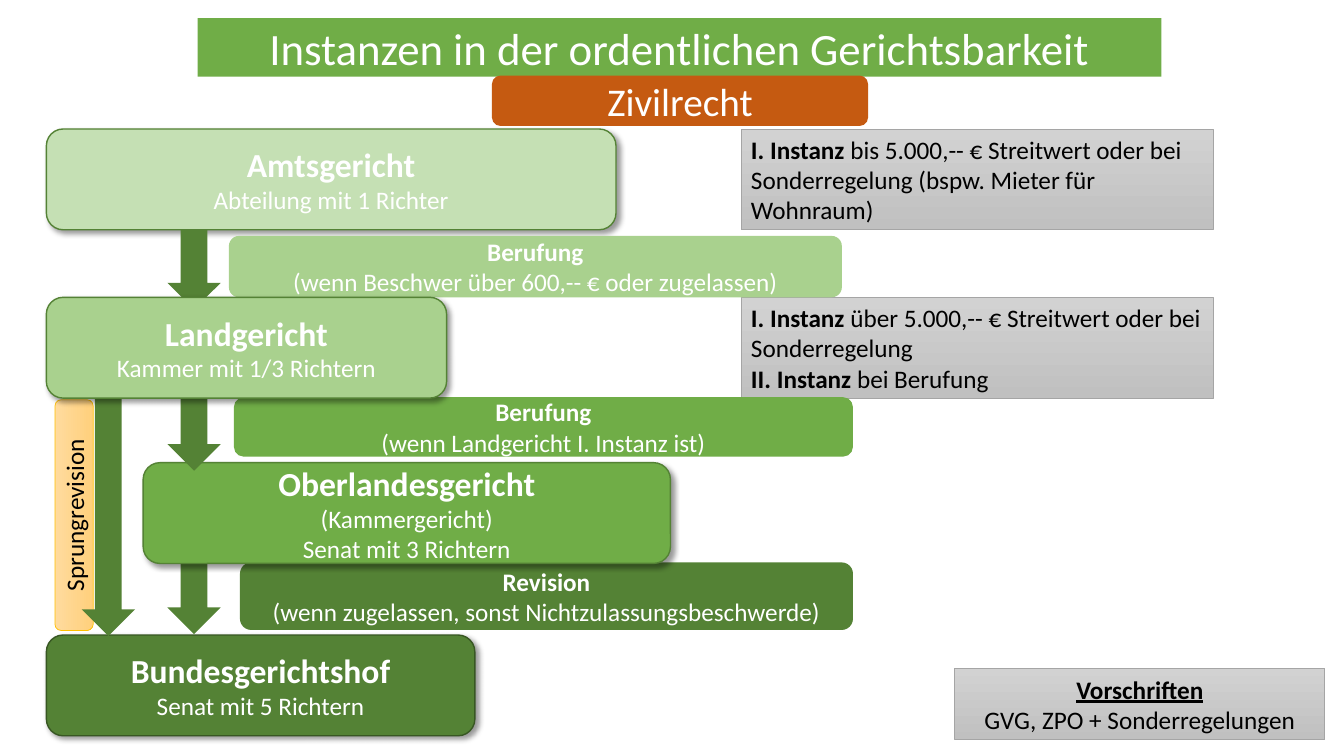
from lxml import etree
from pptx import Presentation
from pptx.dml.color import RGBColor
from pptx.enum import shapes, text
from pptx.oxml import ns
from pptx.util import Inches, Pt

COLORS = {
    "white": "FFFFFF", "black": "000000", "orange": "C55A11",
    "pale": "C5E0B4", "light": "A9D18E", "green": "70AD47",
    "dark": "548235", "deep": "385723",
    "gray_top": "D2D2D2", "gray_bottom": "C0C0C0", "gray_line": "A5A5A5",
    "gold_top": "FFDB9E", "gold_bottom": "FFD07C", "gold_line": "FFC000",
}
ROUND = shapes.MSO_SHAPE.ROUNDED_RECTANGLE
RECT = shapes.MSO_SHAPE.RECTANGLE
DOWN = shapes.MSO_SHAPE.DOWN_ARROW
CENTER = text.PP_ALIGN.CENTER
LEFT = text.PP_ALIGN.LEFT
COURT_LEFT, COURT_HEIGHT = 0.46, 1
ARROW_LEFT, ARROW_WIDTH = 1.66, 0.53
NOTE_LEFT, NOTE_WIDTH = 7.35, 4.68


def rgb(name):
    return RGBColor.from_string(COLORS[name])


def write(box, words, size=18, color="white", bold=False, underline=False,
          align=CENTER, same_line=False):
    frame = box.text_frame
    paragraph = frame.paragraphs[-1]
    if paragraph.runs and not same_line:
        paragraph = frame.add_paragraph()
    paragraph.alignment = align
    run = paragraph.add_run()
    run.text = words
    run.font.name = "Calibri"
    run.font.size = Pt(size)
    run.font.bold = bold
    run.font.underline = underline
    run.font.color.rgb = rgb(color)


def prepare_frame(box):
    frame = box.text_frame
    frame.word_wrap = True
    frame.auto_size = text.MSO_AUTO_SIZE.NONE
    frame.vertical_anchor = text.MSO_ANCHOR.MIDDLE


def add_block(slide, kind, at, fill, line=None, width=1):
    block = slide.shapes.add_shape(kind, *map(Inches, at))
    block.shadow.inherit = False
    if isinstance(fill, tuple):
        block.fill.gradient()
        block.fill.gradient_angle = 270
        for stop, color in zip(block.fill.gradient_stops, fill):
            stop.color.rgb = rgb(color)
    else:
        block.fill.solid()
        block.fill.fore_color.rgb = rgb(fill)
    if line:
        block.line.color.rgb = rgb(line)
        block.line.width = Pt(width)
    else:
        block.line.fill.background()
    prepare_frame(block)
    return block


def add_shadow(block):
    effects = block._element.spPr.find(ns.qn("a:effectLst"))
    shadow = etree.SubElement(
        effects, ns.qn("a:outerShdw"), blurRad=str(Pt(4)), dist=str(Pt(3)),
        dir="2700000", algn="tl", rotWithShape="0")
    color = etree.SubElement(shadow, ns.qn("a:srgbClr"), val=COLORS["black"])
    etree.SubElement(color, ns.qn("a:alpha"), val="40000")


def add_title(slide, words):
    title = slide.shapes.title
    title.left, title.top = Inches(1.96), Inches(0.18)
    title.width, title.height = Inches(9.56), Inches(0.58)
    outline = etree.SubElement(title._element.spPr, ns.qn("a:prstGeom"),
                               prst="roundRect")
    etree.SubElement(outline, ns.qn("a:avLst"))
    title.fill.solid()
    title.fill.fore_color.rgb = rgb("green")
    prepare_frame(title)
    write(title, words, size=32)
    title.text_frame.paragraphs[0].line_spacing = 1.0


def add_court(slide, name, benches, top, width, fill, left=COURT_LEFT,
              line="dark"):
    court = add_block(slide, ROUND, (left, top, width, COURT_HEIGHT), fill, line)
    add_shadow(court)
    write(court, name, size=24, bold=True)
    for bench in benches:
        write(court, bench)


def add_appeal(slide, name, condition, at, fill):
    appeal = add_block(slide, ROUND, at, fill)
    write(appeal, name, bold=True)
    write(appeal, condition)


def add_arrow(slide, top, height, left=ARROW_LEFT):
    add_block(slide, DOWN, (left, top, ARROW_WIDTH, height), "dark")


def add_note(slide, at):
    return add_block(slide, RECT, at, ("gray_top", "gray_bottom"),
                     "gray_line", 0.5)


def add_instance_note(slide, top, entries):
    note = add_note(slide, (NOTE_LEFT, top, NOTE_WIDTH, COURT_HEIGHT))
    for instance, rule in entries:
        write(note, instance, color="black", bold=True, align=LEFT)
        write(note, rule, color="black", align=LEFT, same_line=True)


def add_regulations(slide):
    regulations = add_note(slide, (9.47, 6.63, 3.67, 0.71))
    write(regulations, "Vorschriften", color="black", bold=True, underline=True)
    write(regulations, "GVG, ZPO + Sonderregelungen", color="black")


def add_leap_appeal(slide):
    leap = add_block(slide, ROUND, (-0.41, 4.92, 2.29, 0.38),
                     ("gold_top", "gold_bottom"), "gold_line", 0.5)
    leap.rotation = 270
    write(leap, "Sprungrevision", color="black")
    add_arrow(slide, 3.95, 2.36, left=0.81)


def main():
    deck = Presentation()
    deck.slide_width, deck.slide_height = Inches(13.33), Inches(7.5)
    slide = deck.slides.add_slide(deck.slide_layouts[5])

    add_title(slide, "Instanzen in der ordentlichen Gerichtsbarkeit")
    add_court(slide, "Bundesgerichtshof", ["Senat mit 5 Richtern"],
              6.3, 4.25, "dark", line="deep")
    add_court(slide, "Amtsgericht", ["Abteilung mit 1 Richter"],
              1.28, 5.65, "pale")
    field = add_block(slide, ROUND, (4.88, 0.75, 3.73, 0.5), "orange")
    write(field, "Zivilrecht", size=28)

    add_instance_note(slide, 1.28, [
        ("I. Instanz ", "bis 5.000,-- € Streitwert oder bei "
                        "Sonderregelung (bspw. Mieter für Wohnraum)")])
    add_instance_note(slide, 2.95, [
        ("I. Instanz ", "über 5.000,-- € Streitwert oder bei Sonderregelung"),
        ("II. Instanz ", "bei Berufung")])

    add_appeal(slide, "Revision",
               "(wenn zugelassen, sonst Nichtzulassungsbeschwerde)",
               (2.38, 5.58, 6.08, 0.67), "dark")
    add_arrow(slide, 5.47, 0.82)
    add_regulations(slide)
    add_court(slide, "Oberlandesgericht",
              ["(Kammergericht)", "Senat mit 3 Richtern"],
              4.59, 5.23, "green", left=1.42)
    add_appeal(slide, "Berufung", "(wenn Landgericht I. Instanz ist)",
               (2.32, 3.94, 6.14, 0.59), "green")
    add_arrow(slide, 3.88, 0.79)
    add_appeal(slide, "Berufung",
               "(wenn Beschwer über 600,-- € oder zugelassen)",
               (2.27, 2.34, 6.08, 0.61), "light")
    add_arrow(slide, 2.28, 0.79)
    add_leap_appeal(slide)
    add_court(slide, "Landgericht", ["Kammer mit 1/3 Richtern"],
              2.95, 3.97, "light")
    deck.save("out.pptx")


if __name__ == "__main__":
    main()
